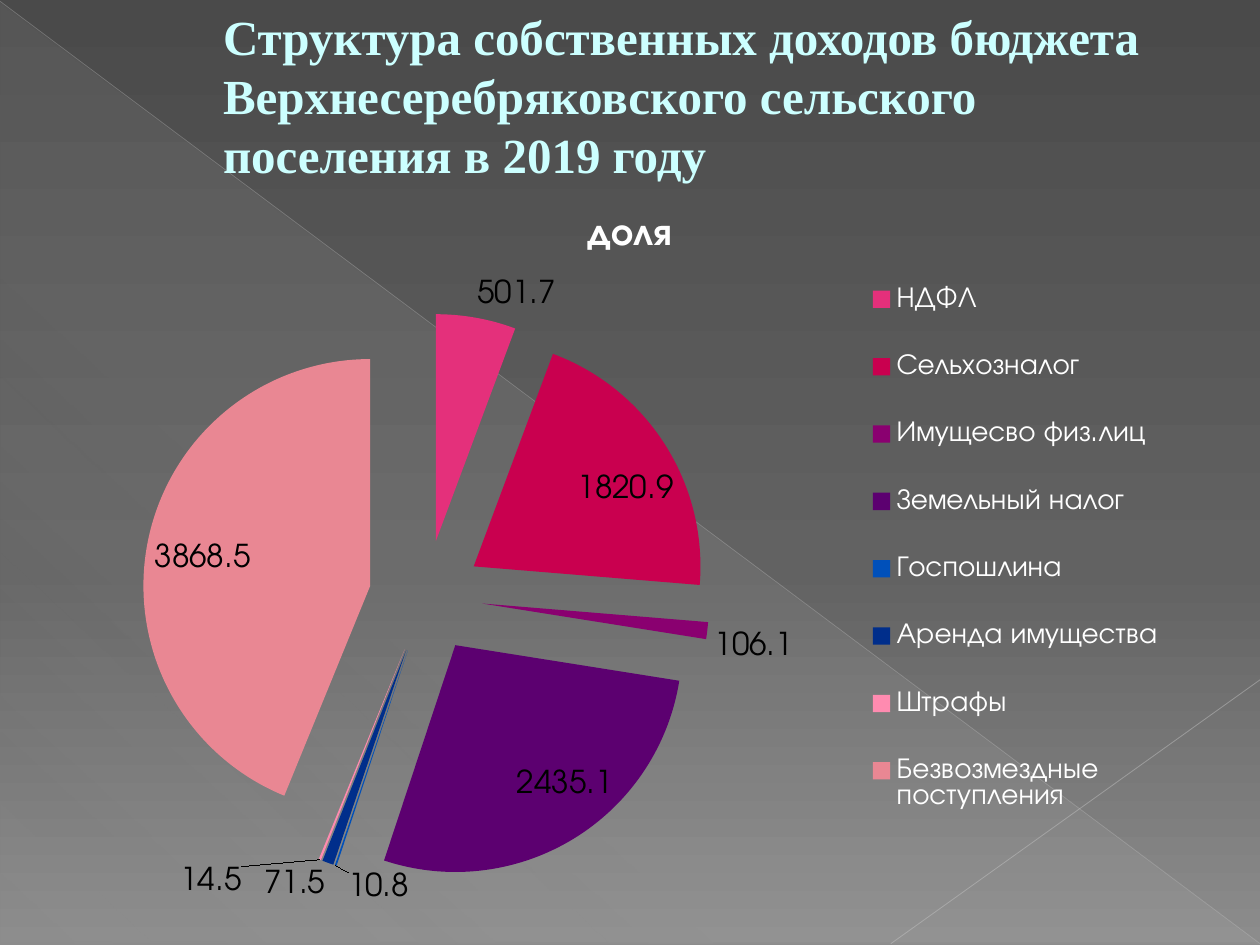
from lxml.etree import SubElement, fromstring
from pptx import Presentation
from pptx.chart.data import CategoryChartData
from pptx.dml.color import RGBColor
from pptx.enum.chart import XL_CHART_TYPE as Chart, XL_LABEL_POSITION as Label, XL_LEGEND_POSITION as Legend
from pptx.enum.shapes import MSO_CONNECTOR as Connector, MSO_SHAPE as Shape
from pptx.enum.text import MSO_ANCHOR as Anchor, MSO_AUTO_SIZE as AutoSize, PP_ALIGN as Align
from pptx.oxml.ns import nsdecls, qn
from pptx.util import Inches, Pt

WIDTH, HEIGHT = 10, 7.5
CHART_FONT = "TeX Gyre Adventor"
INCOME = [
    ("НДФЛ", 501.7, "E4307B"),
    ("Сельхозналог", 1820.9, "C9004F"),
    ("Имущесво физ.лиц", 106.1, "8A0070"),
    ("Земельный налог", 2435.1, "5C0070"),
    ("Госпошлина", 10.8, "0050BA"),
    ("Аренда имущества", 71.5, "002E8B"),
    ("Штрафы", 14.5, "FF8BB0"),
    ("Безвозмездные поступления", 3868.5, "E98793"),
]


def color(value):
    """Turn a hex string into a colour."""
    return RGBColor.from_string(value)


def place(shape, box):
    """Move a shape to a box given in inches."""
    shape.left, shape.top, shape.width, shape.height = map(Inches, box)


def set_font(font, size, tint, name=CHART_FONT, bold=False):
    """Format a font."""
    font.size, font.name, font.bold = Pt(size), name, bold
    font.color.rgb = color(tint)


def write(frame, text, align=Align.LEFT, indent=0, outline=None, **style):
    """Write one formatted paragraph into a text frame."""
    para = frame.paragraphs[0]
    para.alignment = align
    span = para.add_run()
    span.text = text
    set_font(span.font, **style)
    if indent:
        props = para._p.get_or_add_pPr()
        props.set("marL", str(Inches(indent)))
        props.set("indent", "0")
    if outline:
        span._r.get_or_add_rPr().insert(0, fromstring(
            f'<a:ln {nsdecls("a")} w="{Pt(0.5)}"><a:solidFill>'
            f'<a:srgbClr val="{outline}"/></a:solidFill></a:ln>'))


def set_gradient(holder, stops, angle):
    """Replace the solid fill in holder by a gradient of (position, colour, opacity) stops."""
    marks = "".join(
        f'<a:gs pos="{spot * 1000}"><a:srgbClr val="{tint}">'
        f'<a:alpha val="{opacity * 1000}"/></a:srgbClr></a:gs>'
        for spot, tint, opacity in stops)
    gradient = fromstring(
        f'<a:gradFill {nsdecls("a")} rotWithShape="1"><a:gsLst>{marks}</a:gsLst>'
        f'<a:lin ang="{angle * 60000}" scaled="0"/></a:gradFill>')
    solid = holder.find(qn("a:solidFill"))
    solid.getparent().replace(solid, gradient)


def add_line(page, start, end, tint, width, opacity):
    """Draw a thin translucent line."""
    line = page.shapes.add_connector(Connector.STRAIGHT, *map(Inches, start + end))
    line.line.color.rgb = color(tint)
    line.line.width = Pt(width)
    props = line._element.spPr
    tone = next(props.iter(qn("a:srgbClr")))
    SubElement(tone, qn("a:alpha")).set("val", str(opacity * 1000))
    SubElement(props, qn("a:effectLst"))


def add_backdrop(page, box):
    """Paint the background, the pale triangle and the two diagonals."""
    left, top, width, height = box
    right, bottom = left + width, top + height
    page.background.fill.solid()
    page.background.fill.fore_color.rgb = color("4A4A4A")
    set_gradient(page._element.cSld.find(qn("p:bg")).find(qn("p:bgPr")),
                 [(0, "4A4A4A", 100), (60, "626262", 100), (100, "8C8C8C", 100)], 90)
    triangle = page.shapes.add_shape(Shape.RIGHT_TRIANGLE, *map(Inches, box))
    triangle.shadow.inherit = False
    triangle.fill.solid()
    triangle.fill.fore_color.rgb = color("D2D2D2")
    triangle.line.fill.background()
    set_gradient(triangle._element.spPr,
                 [(0, "D2D2D2", 10), (70, "D2D2D2", 8), (100, "D2D2D2", 1)], 133)
    add_line(page, (left, top), (right, bottom), "BFBFBF", 0.39, 35)
    add_line(page, (right, top + 0.72 * height), (left + 0.707 * width, bottom), "C6C6C6", 0.47, 45)


def add_title(page, box):
    """Fill the title placeholder and bring it in front of the backdrop."""
    title = page.shapes.title
    place(title, box)
    frame = title.text_frame
    frame.word_wrap, frame.auto_size = True, AutoSize.NONE
    frame.vertical_anchor = Anchor.MIDDLE
    write(frame, "Структура собственных доходов бюджета Верхнесеребряковского сельского поселения в 2019 году",
          indent=0.53, outline="B12761", size=28, tint="CCFFFF", name="Times New Roman", bold=True)
    title._element.getparent().append(title._element)


def set_layout(part, left, top, width, height, inner=False):
    """Fix a chart part at shares of the chart's size."""
    for old in part.findall(qn("c:layout")):
        part.remove(old)
    target = '<c:layoutTarget val="inner"/>' if inner else ""
    layout = fromstring(
        f'<c:layout {nsdecls("c")}><c:manualLayout>{target}'
        f'<c:xMode val="edge"/><c:yMode val="edge"/><c:x val="{left}"/><c:y val="{top}"/>'
        f'<c:w val="{width}"/><c:h val="{height}"/></c:manualLayout></c:layout>')
    if inner:
        part.insert(0, layout)
    else:
        part.find(qn("c:legendPos")).addnext(layout)


def add_income_chart(page, box):
    """Draw the exploded pie of incomes with its legend."""
    names, values, tints = zip(*INCOME)
    data = CategoryChartData()
    data.categories = names
    data.add_series("доля", values)
    chart = page.shapes.add_chart(Chart.PIE, *map(Inches, box), data).chart
    set_font(chart.font, 18, "FFFFFF")
    chart.has_title = True
    write(chart.chart_title.text_frame, "доля", align=Align.CENTER, size=21.6, tint="FFFFFF", bold=True)
    chart.has_legend = True
    chart.legend.position = Legend.RIGHT
    chart.legend.include_in_layout = False
    set_font(chart.legend.font, 16.5, "FFFFFF")
    set_layout(chart.legend._element, 0.69, 0.08, 0.3, 0.81)

    plot = chart.plots[0]
    plot.vary_by_categories = True
    series = plot.series[0]
    for index, tint in enumerate(tints):
        fill = series.points[index].format.fill
        fill.solid()
        fill.fore_color.rgb = color(tint)
    series._element.find(qn("c:dPt")).addprevious(
        fromstring(f'<c:explosion {nsdecls("c")} val="25"/>'))
    plot.has_data_labels = True
    labels = plot.data_labels
    labels.show_value, labels.show_percentage = True, False
    labels.number_format, labels.number_format_is_linked = "General", False
    labels.position = Label.BEST_FIT
    set_font(labels.font, 18, "000000")
    set_layout(chart._chartSpace.chart.plotArea, 0.07, 0.17, 0.5, 0.76, inner=True)


def main():
    """Build the slide and save it."""
    deck = Presentation()
    deck.slide_width, deck.slide_height = Inches(WIDTH), Inches(HEIGHT)
    page = deck.slides.add_slide(deck.slide_layouts[5])
    add_backdrop(page, (0, 0.01, WIDTH, HEIGHT - 0.02))
    add_title(page, (0.114 * WIDTH, 0.017 * HEIGHT, 0.82 * WIDTH, HEIGHT / 6))
    add_income_chart(page, (0.05 * WIDTH, 0.196 * HEIGHT, 0.9 * WIDTH, 0.792 * HEIGHT))
    deck.save("out.pptx")


if __name__ == "__main__":
    main()
